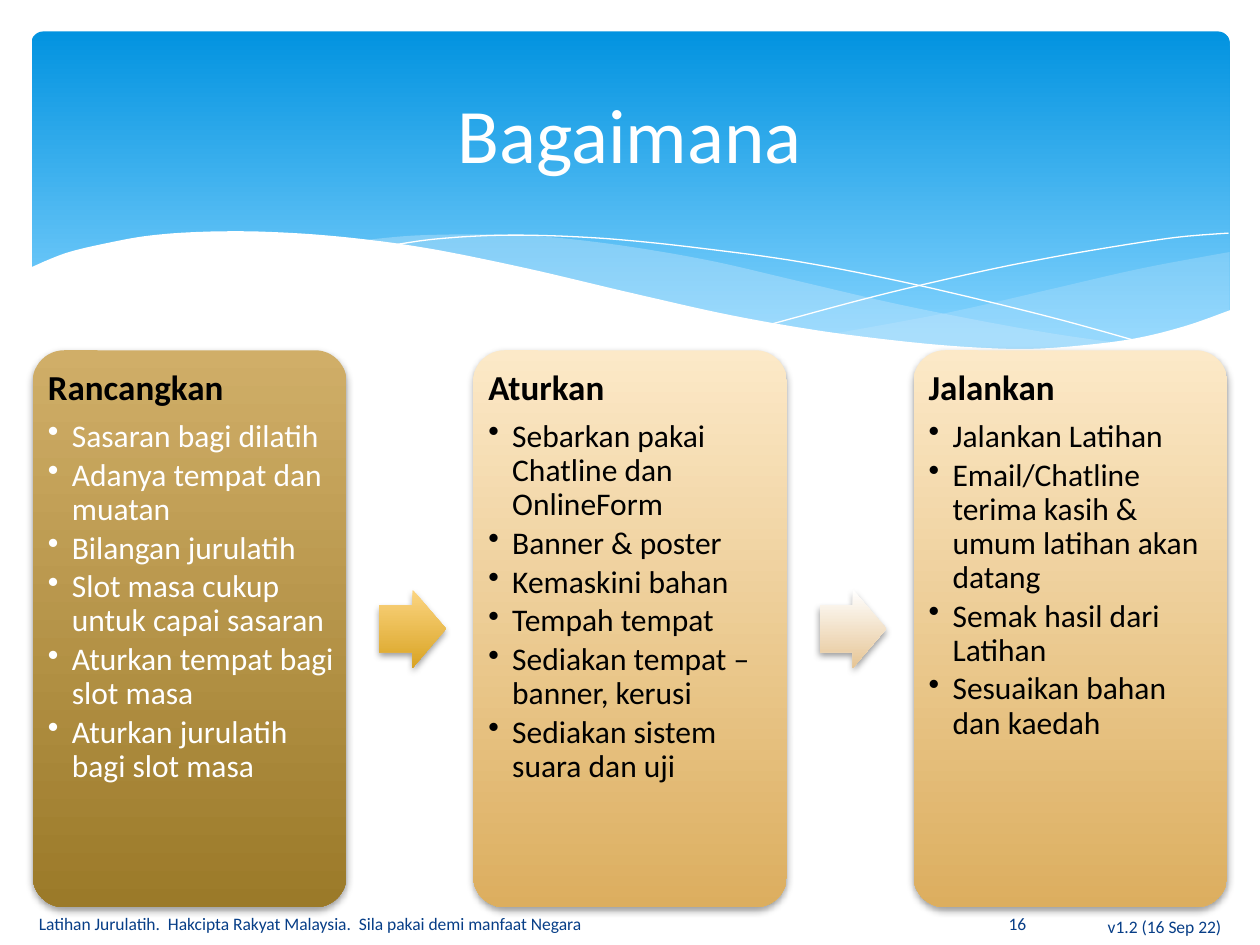
from dataclasses import dataclass
from typing import Any

from lxml.etree import SubElement
from pptx import Presentation
from pptx.dml.color import RGBColor
from pptx.enum.shapes import MSO_SHAPE
from pptx.enum.text import MSO_ANCHOR, PP_ALIGN
from pptx.oxml.ns import qn
from pptx.shapes.autoshape import Shape
from pptx.shapes.shapetree import SlideShapes
from pptx.util import Inches, Pt

HUES = {
    "white": "FFFFFF", "black": "000000", "navy": "073E87", "mist": "C6E7FC",
    "sky": "0293E0", "pale": "83D3FE", "tan": "D0AE68", "brown": "9B7A29",
    "cream": "FCE9C8", "sand": "DCAE5F", "gold": "FCD582", "amber": "D9A424",
    "beige": "E6C595",
}
STEP = 3.495
STEPS = 8

Point = tuple[float, float]
Box = tuple[float, float, float, float]


@dataclass
class Card:
    head: str
    items: list[str]
    grad: tuple[str, str]
    ink: str


@dataclass
class Curve:
    knots: list[Point]
    edge: list[Point]
    fill: str = ""
    alpha: int = 100


@dataclass
class Label:
    text: str
    box: Box
    size: int
    hue: str
    align: Any


CARDS = [
    Card("Rancangkan", [
        "Sasaran bagi dilatih", "Adanya tempat dan muatan", "Bilangan jurulatih",
        "Slot masa cukup untuk capai sasaran", "Aturkan tempat bagi slot masa",
        "Aturkan jurulatih bagi slot masa"], ("tan", "brown"), "white"),
    Card("Aturkan", [
        "Sebarkan pakai Chatline dan OnlineForm", "Banner & poster", "Kemaskini bahan",
        "Tempah tempat", "Sediakan tempat – banner, kerusi",
        "Sediakan sistem suara dan uji"], ("cream", "sand"), "black"),
    Card("Jalankan", [
        "Jalankan Latihan", "Email/Chatline terima kasih & umum latihan akan datang",
        "Semak hasil dari Latihan", "Sesuaikan bahan dan kaedah"],
        ("cream", "sand"), "black"),
]
ARROWS = [("gold", "amber"), ("white", "beige")]
CURVES = [
    Curve([(9.76, 2), (9.06, 2.13), (8.32, 2.3), (7.53, 2.48), (6.61, 2.65)],
          [(6.91, 2.69), (7.32, 2.74), (7.69, 2.77), (8.03, 2.78), (8.44, 2.77),
           (8.81, 2.73), (9.21, 2.65), (9.49, 2.57), (9.76, 2.47)], "mist", 29),
    Curve([(8.93, 2.73), (8.37, 2.65), (7.75, 2.54), (7.06, 2.4), (6.29, 2.22),
           (5.69, 2.08), (5.14, 1.98), (4.64, 1.91), (4.2, 1.87), (3.8, 1.86),
           (3.28, 1.87), (2.86, 1.91)],
          [(3.42, 1.99), (4.04, 2.11), (4.91, 2.32), (5.66, 2.48), (6.34, 2.61),
           (6.95, 2.7), (7.48, 2.76), (8.07, 2.79), (8.48, 2.78), (8.93, 2.73)],
          "mist", 40),
    Curve([(3.09, 1.95), (3.43, 1.9), (3.87, 1.87), (4.33, 1.87), (4.89, 1.9),
           (5.56, 1.97), (6.36, 2.08), (7.27, 2.26), (8.31, 2.51), (9.07, 2.72)], []),
    Curve([(6.13, 2.57), (6.95, 2.35), (7.76, 2.16), (8.36, 2.04), (8.95, 1.94),
           (9.37, 1.88), (9.75, 1.85)], []),
    Curve([(9.77, 2.46), (9.4, 2.59), (8.99, 2.69), (8.5, 2.75), (8.09, 2.77),
           (7.61, 2.75), (7.08, 2.7), (6.47, 2.62), (5.79, 2.5), (5.03, 2.33),
           (4.18, 2.13), (3.39, 1.97), (2.71, 1.88), (2.11, 1.84), (1.61, 1.84),
           (1.19, 1.87), (0.85, 1.93), (0.52, 2.01), (0.23, 2.13)],
          [(0.23, 3.29), (9.77, 3.29)], "white"),
]
NOTE = "Latihan Jurulatih.  Hakcipta Rakyat Malaysia.  Sila pakai demi manfaat Negara"
LABELS = [
    Label("Bagaimana", (0.5, 0.37, 9, 1.37), 44, "white", PP_ALIGN.CENTER),
    Label("v1.2 (16 Sep 22)", (8.64, 7.2, 1.15, 0.3), 10, "navy", PP_ALIGN.RIGHT),
    Label(NOTE, (0.21, 7.2, 7.2, 0.26), 10, "navy", PP_ALIGN.LEFT),
    Label("16", (7.76, 7.2, 0.63, 0.26), 10, "navy", PP_ALIGN.CENTER),
]


def tint(name: str) -> RGBColor:
    return RGBColor.from_string(HUES[name])


def put(thing: Any, style: dict[str, Any]) -> None:
    for key, val in style.items():
        setattr(thing, key, val)


def spots(box: Box) -> list[int]:
    return [Inches(part) for part in box]


def smooth(knots: list[Point]) -> list[Point]:
    ends = [knots[0], *knots, knots[-1]]
    out = [knots[0]]
    for a, b, c, d in zip(ends, ends[1:], ends[2:], ends[3:]):
        for step in range(1, STEPS + 1):
            t = step / STEPS
            out.append(tuple(
                (2 * q + (r - p) * t + (2 * p - 5 * q + 4 * r - s) * t ** 2
                 + (3 * q - p - 3 * r + s) * t ** 3) / 2
                for p, q, r, s in zip(a, b, c, d)))
    return out


def draw_curve(shapes: SlideShapes, curve: Curve) -> None:
    dots = smooth(curve.knots)
    if len(curve.edge) > 2:
        dots += smooth([dots[-1], *curve.edge])[1:]
    else:
        dots += curve.edge
    ends = [(Inches(x), Inches(y)) for x, y in dots]
    pen = shapes.build_freeform(*ends[0], scale=1.0)
    pen.add_line_segments(ends[1:], close=bool(curve.fill))
    shape = pen.convert_to_shape()
    shape.shadow.inherit = False
    if not curve.fill:
        shape.fill.background()
        shape.line.color.rgb = tint("white")
        shape.line.width = Pt(0)
        return
    shape.line.fill.background()
    shape.fill.solid()
    shape.fill.fore_color.rgb = tint(curve.fill)
    if curve.alpha < 100:
        node = shape._element.spPr.find(".//" + qn("a:srgbClr"))
        SubElement(node, qn("a:alpha"), val=str(curve.alpha * 1000))


def draw_shape(shapes: SlideShapes, kind: Any, box: Box, grad: tuple[str, str],
               bends: list[float], stop: float = 1.0) -> Shape:
    shape = shapes.add_shape(kind, *spots(box))
    for at, bend in enumerate(bends):
        shape.adjustments[at] = bend
    shape.shadow.inherit = False
    shape.line.fill.background()
    shape.fill.gradient()
    shape.fill.gradient_angle = 270
    for mark, name, place in zip(shape.fill.gradient_stops, grad, (0.0, stop)):
        mark.color.rgb = tint(name)
        mark.position = place
    return shape


def add_shade(shape: Shape) -> None:
    base = shape._element.spPr.find(qn("a:effectLst"))
    shade = SubElement(base, qn("a:outerShdw"), blurRad=str(Pt(4)), dist=str(Pt(2)),
                       dir="5400000", rotWithShape="0")
    tone = SubElement(shade, qn("a:srgbClr"), val=HUES["black"])
    SubElement(tone, qn("a:alpha"), val="38000")


def write(para: Any, text: str, size: int, hue: str, bold: bool = False) -> None:
    run = para.add_run()
    run.text = text
    put(run.font, {"name": "Calibri", "size": Pt(size), "bold": bold})
    run.font.color.rgb = tint(hue)


def draw_card(shapes: SlideShapes, card: Card, left: float) -> None:
    add_shade(draw_shape(shapes, MSO_SHAPE.ROUNDED_RECTANGLE,
                         (left, 2.78, 2.49, 4.42), card.grad, [0.1]))
    frame = shapes.add_textbox(*spots((left + 0.08, 2.86, 2.35, 4.27))).text_frame
    put(frame, {"word_wrap": True, "margin_left": Inches(0.04), "margin_right": 0,
                "margin_top": Inches(0.08), "margin_bottom": Inches(0.08)})
    head = frame.paragraphs[0]
    put(head, {"line_spacing": 0.9, "space_after": Pt(7)})
    write(head, card.head, 20, "black", True)
    for item in card.items:
        para = frame.add_paragraph()
        put(para, {"level": 1, "line_spacing": 0.9, "space_after": Pt(2.7)})
        props = para._p.get_or_add_pPr()
        props.set("marL", str(Inches(0.19)))
        props.set("indent", str(Inches(-0.19)))
        SubElement(props, qn("a:buChar"), char="•")
        write(para, item, 18, card.ink)


def draw_label(shapes: SlideShapes, label: Label) -> None:
    frame = shapes.add_textbox(*spots(label.box)).text_frame
    put(frame, {"word_wrap": True, "vertical_anchor": MSO_ANCHOR.MIDDLE})
    para = frame.paragraphs[0]
    para.alignment = label.align
    write(para, label.text, label.size, label.hue)


def main() -> None:
    deck = Presentation()
    put(deck, {"slide_width": Inches(10), "slide_height": Inches(7.5)})
    shapes = deck.slides.add_slide(deck.slide_layouts[6]).shapes
    draw_shape(shapes, MSO_SHAPE.ROUNDED_RECTANGLE, (0.25, 0.25, 9.51, 2.7),
               ("sky", "pale"), [0.034], 0.9)
    for curve in CURVES:
        draw_curve(shapes, curve)
    for at, card in enumerate(CARDS):
        draw_card(shapes, card, 0.26 + STEP * at)
    for at, grad in enumerate(ARROWS):
        add_shade(draw_shape(shapes, MSO_SHAPE.RIGHT_ARROW,
                             (3.01 + STEP * at, 4.68, 0.53, 0.62), grad, [0.6, 0.5]))
    for label in LABELS:
        draw_label(shapes, label)
    deck.save("out.pptx")


if __name__ == "__main__":
    main()
